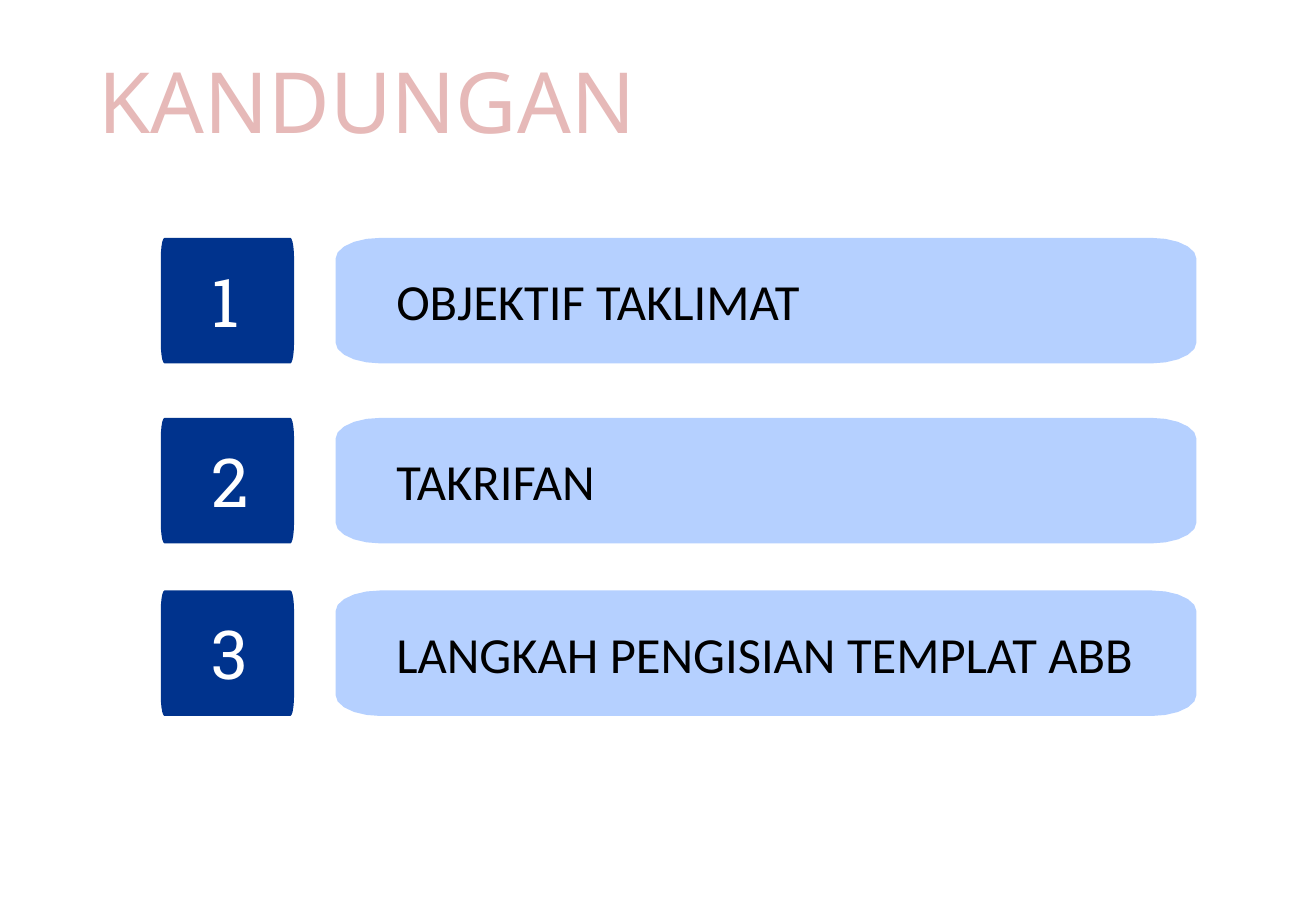
from math import cos, radians, sin

from pptx import Presentation
from pptx.dml.color import RGBColor
from pptx.enum.text import MSO_ANCHOR, PP_ALIGN
from pptx.util import Pt

LEFT = PP_ALIGN.LEFT
TOP = MSO_ANCHOR.TOP
MIDDLE = MSO_ANCHOR.MIDDLE

PINK = RGBColor(0xE6, 0xB9, 0xB8)
LIGHT_BLUE = RGBColor(0xB5, 0xD0, 0xFF)
NAVY = RGBColor(0x00, 0x33, 0x8D)
BLACK = RGBColor(0x00, 0x00, 0x00)
WHITE = RGBColor(0xFF, 0xFF, 0xFF)

ROW_HEIGHT = 74.4
CORNER_HEIGHT = 12.4
BAR_LEFT, BAR_WIDTH, BAR_CORNER = 198.9, 510.3, 26.6
BADGE_LEFT, BADGE_WIDTH, BADGE_CORNER = 95.3, 79, 2.2
ROWS = [
    (141, "OBJEKTIF TAKLIMAT"),
    (247.7, "TAKRIFAN"),
    (350, "LANGKAH PENGISIAN TEMPLAT ABB"),
]


def add_panel(left, top, width, corner_width, color):
    near_x, far_x = left + corner_width, left + width - corner_width
    near_y, far_y = top + CORNER_HEIGHT, top + ROW_HEIGHT - CORNER_HEIGHT
    centers = [(far_x, far_y), (near_x, far_y), (near_x, near_y), (far_x, near_y)]
    points = []
    for quarter, (x, y) in enumerate(centers):
        for step in range(6):
            angle = radians(90 * quarter + 18 * step)
            points.append((Pt(x + corner_width * cos(angle)),
                           Pt(y + CORNER_HEIGHT * sin(angle))))
    builder = page.shapes.build_freeform(*points[0])
    builder.add_line_segments(points[1:], close=True)
    panel = builder.convert_to_shape()
    panel.shadow.inherit = False
    panel.fill.solid()
    panel.fill.fore_color.rgb = color
    panel.line.fill.background()
    return panel


def write(box, text, font_name, size, color, anchor):
    frame = box.text_frame
    frame.text = text
    frame.word_wrap = True
    frame.vertical_anchor = anchor
    para = frame.paragraphs[0]
    para.alignment = LEFT
    span = para.runs[0]
    span.font.name = font_name
    span.font.size = Pt(size)
    span.font.color.rgb = color
    return frame


deck = Presentation()
deck.slide_width = Pt(780)
deck.slide_height = Pt(540)
page = deck.slides.add_slide(deck.slide_layouts[6])

title = page.shapes.add_textbox(Pt(58.3), Pt(28.8), Pt(663), Pt(60.5))
title_frame = write(title, "KANDUNGAN", "Noto Sans", 50, PINK, MIDDLE)
title_frame.margin_left = title_frame.margin_right = 0
title_frame.margin_top = title_frame.margin_bottom = 0

for number, (top, topic) in enumerate(ROWS, start=1):
    bar = add_panel(BAR_LEFT, top, BAR_WIDTH, BAR_CORNER, LIGHT_BLUE)
    bar_frame = write(bar, topic, "Calibri", 30, BLACK, MIDDLE)
    bar_frame.margin_left = Pt(36)
    bar_frame.margin_right = bar_frame.margin_top = bar_frame.margin_bottom = 0

    add_panel(BADGE_LEFT, top, BADGE_WIDTH, BADGE_CORNER, NAVY)
    label = page.shapes.add_textbox(Pt(118.1), Pt(top + 9.4), Pt(41.8), Pt(55.4))
    write(label, str(number), "Roboto Slab", 40, WHITE, TOP)

deck.save("out.pptx")
